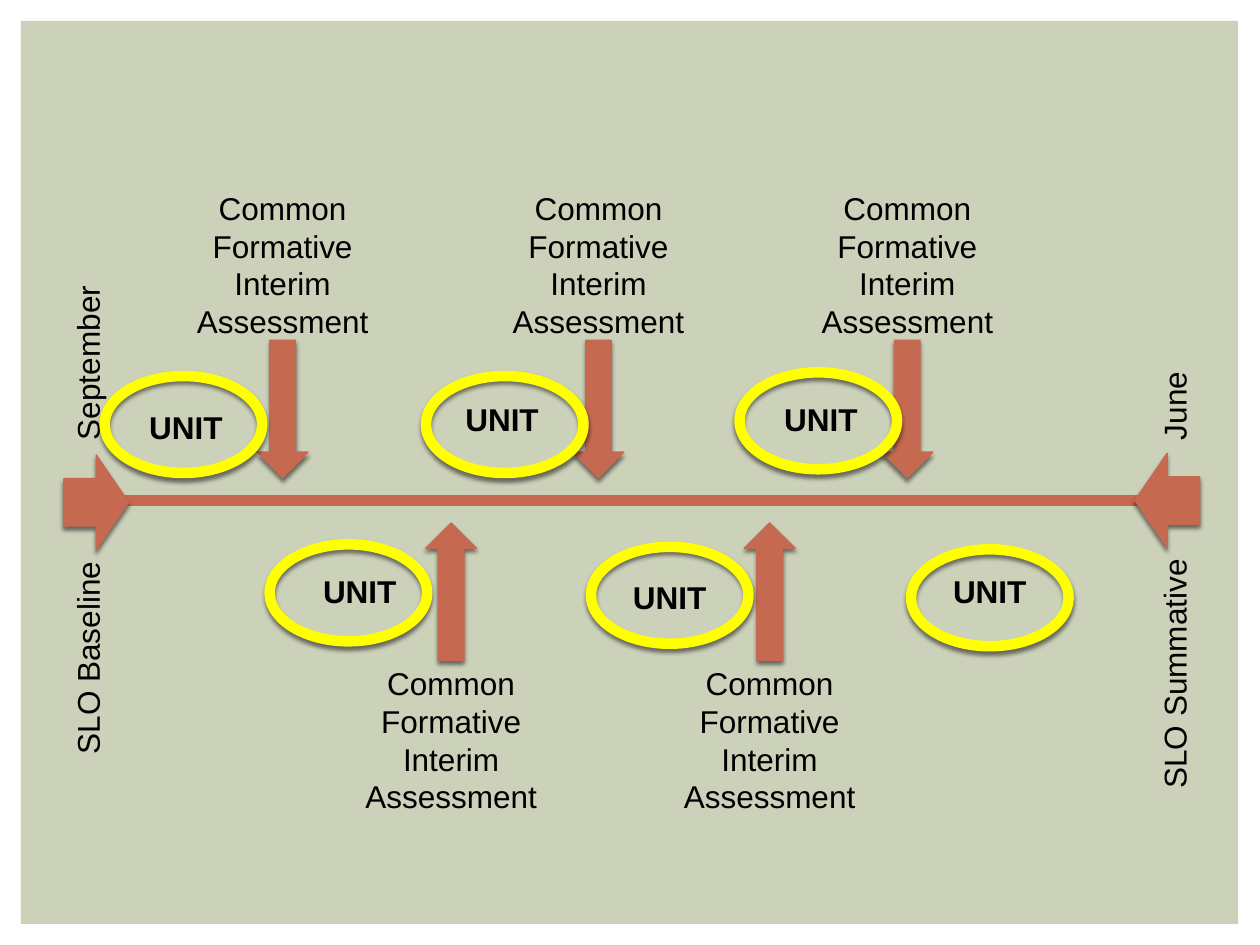
from dataclasses import dataclass

from lxml.etree import SubElement
from pptx import Presentation
from pptx.dml.color import RGBColor
from pptx.enum.shapes import MSO_CONNECTOR as Connector, MSO_SHAPE as Preset
from pptx.enum.text import MSO_AUTO_SIZE as AutoSize, PP_ALIGN as Align
from pptx.oxml.ns import qn
from pptx.util import Pt


@dataclass(frozen=True)
class Theme:
    panel: str = "CCD1B9"
    accent: str = "C66951"
    ring: str = "FFFF00"
    text: str = "000000"
    shadow: str = "000000"
    font: str = "Arial"
    text_size: float = 18
    heavy_line: float = 6
    thin_line: float = 0.79


class SlideBuilder:
    def __init__(self, slide, theme):
        self.slide = slide
        self.theme = theme

    def shape(self, preset, left, top, width, height, fill=None, line=None,
              line_width=0, shadow=False):
        shape = self.slide.shapes.add_shape(
            preset, Pt(left), Pt(top), Pt(width), Pt(height))
        shape.shadow.inherit = False
        if fill:
            shape.fill.solid()
            shape.fill.fore_color.rgb = RGBColor.from_string(fill)
        else:
            shape.fill.background()
        if line:
            shape.line.color.rgb = RGBColor.from_string(line)
            shape.line.width = Pt(line_width)
        else:
            shape.line.fill.background()
        if shadow:
            self.drop_shadow(shape)
        return shape

    def drop_shadow(self, shape):
        effects = shape._element.spPr.find(qn("a:effectLst"))
        outer = SubElement(effects, qn("a:outerShdw"), blurRad=str(Pt(2.5)),
                           dist=str(Pt(2)), dir="5400000", rotWithShape="0")
        color = SubElement(outer, qn("a:srgbClr"), val=self.theme.shadow)
        SubElement(color, qn("a:alpha"), val="50000")

    def arrow(self, preset, left, top, width, height):
        return self.shape(preset, left, top, width, height, self.theme.accent,
                          self.theme.accent, self.theme.thin_line, shadow=True)

    def ring(self, center_x, center_y, width=90, height=55.4):
        return self.shape(Preset.OVAL, center_x - width / 2,
                          center_y - height / 2, width, height,
                          line=self.theme.ring,
                          line_width=self.theme.heavy_line, shadow=True)

    def line(self, start_x, end_x, y):
        line = self.slide.shapes.add_connector(
            Connector.STRAIGHT, Pt(start_x), Pt(y), Pt(end_x), Pt(y))
        line.line.color.rgb = RGBColor.from_string(self.theme.accent)
        line.line.width = Pt(self.theme.heavy_line)
        SubElement(line._element.spPr, qn("a:effectLst"))

    def text(self, text, center_x, center_y, width, height=29,
             align=Align.CENTER, bold=False, rotation=0):
        box = self.slide.shapes.add_textbox(
            Pt(center_x - width / 2), Pt(center_y - height / 2),
            Pt(width), Pt(height))
        box.rotation = rotation
        frame = box.text_frame
        frame.word_wrap = True
        frame.auto_size = AutoSize.SHAPE_TO_FIT_TEXT
        frame.text = text
        paragraph = frame.paragraphs[0]
        paragraph.alignment = align
        font_format = {"name": self.theme.font, "bold": bold,
                       "size": Pt(self.theme.text_size)}
        for run in paragraph.runs:
            for name, value in font_format.items():
                setattr(run.font, name, value)
            run.font.color.rgb = RGBColor.from_string(self.theme.text)


ASSESSMENT = "Common\vFormative\vInterim\vAssessment"

# Arrow preset, arrow top, text center and the arrow centers of each row
ASSESSMENT_ROWS = [
    (Preset.DOWN_ARROW, 194.4, 151.5, (161.5, 342, 518.5)),
    (Preset.UP_ARROW, 298.8, 423, (257.8, 439.8)),
]

# Centers of each ring and of its label
UNITS = [
    ((104.8, 242.6), (106.2, 244.1)),
    ((288.4, 242.6), (286.9, 239.8)),
    ((467.6, 240.5), (469.1, 239.8)),
    ((199.1, 338.8), (205.6, 337.7)),
    ((382.7, 340.2), (382.7, 341.3)),
    ((565.6, 341.6), (565.6, 337.7)),
]

# Text, center, width and alignment of the upright labels
END_LABELS = [
    ("September", 50, 206, 105, Align.LEFT),
    ("June", 671, 206, 105, Align.LEFT),
    ("SLO Baseline", 50, 389.5, 151, Align.RIGHT),
    ("SLO Summative", 671, 388, 151, Align.RIGHT),
]


def main():
    presentation = Presentation()
    presentation.slide_width, presentation.slide_height = Pt(720), Pt(540)
    slide = presentation.slides.add_slide(presentation.slide_layouts[6])
    theme = Theme()
    builder = SlideBuilder(slide, theme)

    # Background panel
    builder.shape(Preset.RECTANGLE, 12, 12, 695.5, 528 - 12, theme.panel)

    # Timeline and its ends
    builder.line(36.5, 685.5, 286)
    builder.arrow(Preset.RIGHT_ARROW, 36.5, 260, 37, 54)
    builder.arrow(Preset.LEFT_ARROW, 648.5, 259, 37, 54)
    for text, center_x, center_y, width, align in END_LABELS:
        builder.text(text, center_x, center_y, width, align=align, rotation=270)

    # Interim assessments above and below the line
    for preset, arrow_top, text_y, centers in ASSESSMENT_ROWS:
        for center_x in centers:
            builder.arrow(preset, center_x - 14.5, arrow_top, 29, 78.5)
            builder.text(ASSESSMENT, center_x, text_y, 117, 94.3)

    # Units
    for ring_center, label_center in UNITS:
        builder.text("UNIT", *label_center, 58.5, bold=True)
        builder.ring(*ring_center)

    presentation.save("out.pptx")


if __name__ == "__main__":
    main()
